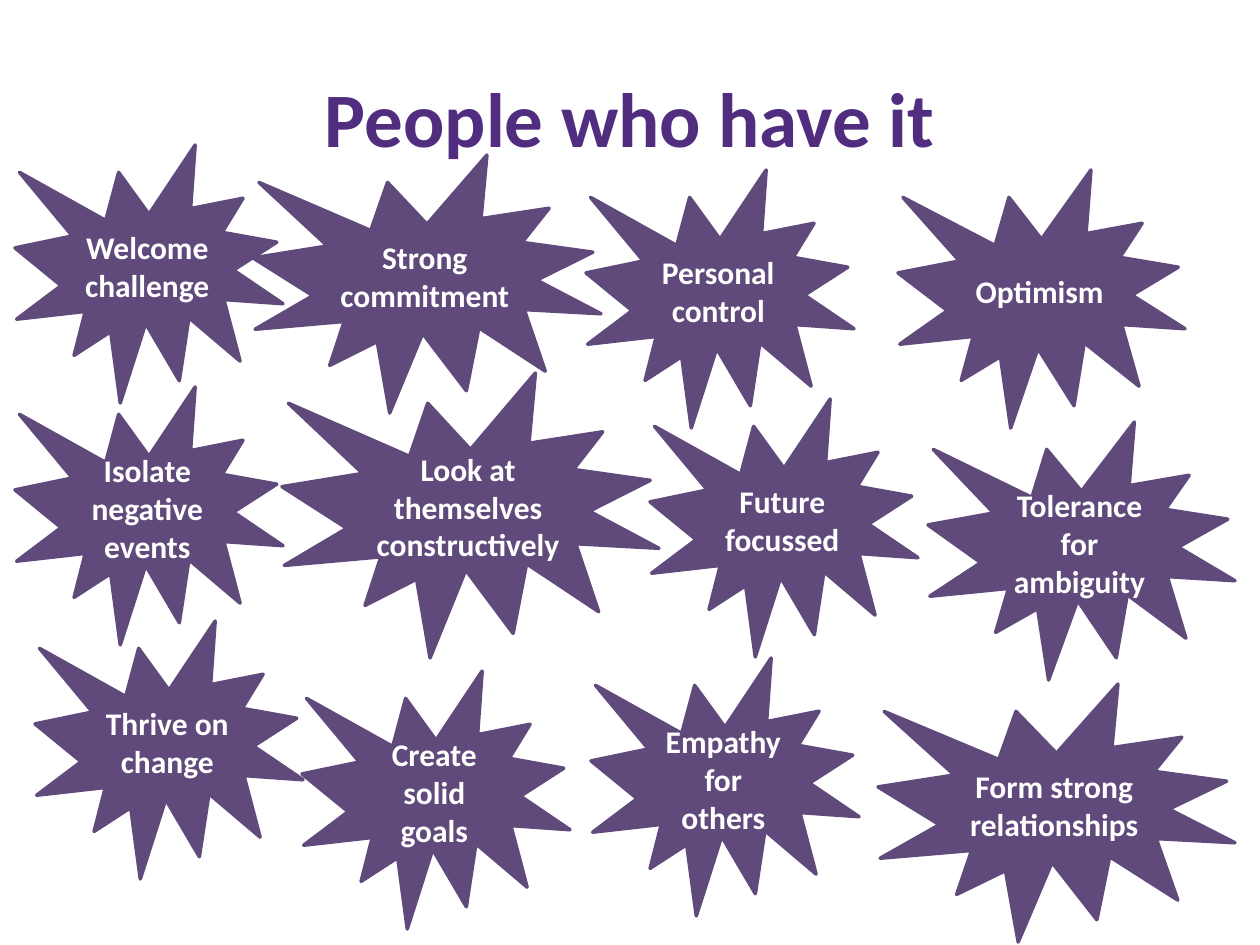
from pptx import Presentation
from pptx.dml.color import RGBColor
from pptx.enum.shapes import MSO_SHAPE
from pptx.enum.text import MSO_ANCHOR, PP_ALIGN
from pptx.util import Emu, Pt

PX = 914400 / 126  # EMU per pixel
TITLE_COLOUR = "502D7F"
STAR_COLOUR = "604A7B"
STAR_WIDTH, STAR_HEIGHT = 268, 258


def px(*lengths):
    return [Emu(round(length * PX)) for length in lengths]


def write(frame, text, size, colour):
    frame.word_wrap = True
    frame.vertical_anchor = MSO_ANCHOR.MIDDLE
    frame.text = text
    paragraph = frame.paragraphs[0]
    paragraph.alignment = PP_ALIGN.CENTER
    font = paragraph.runs[0].font
    font.name, font.size, font.bold = "Calibri", Pt(size), True
    font.color.rgb = RGBColor.from_string(colour)


prs = Presentation()
prs.slide_width, prs.slide_height = px(1260, 945)
slide = prs.slides.add_slide(prs.slide_layouts[5])

# Title
heading = slide.shapes.title
heading.left, heading.top, heading.width, heading.height = px(63, 38, 1134, 157)
write(heading.text_frame, "People who have it", size=44, colour=TITLE_COLOUR)

# Qualities, from back to front: text, left, top, width, height
qualities = [
    ("Welcome challenge", 15, 145, STAR_WIDTH, STAR_HEIGHT),
    ("Thrive on change", 35, 621, STAR_WIDTH, STAR_HEIGHT),
    ("Look at themselves constructively", 282, 373, 377, 285),
    ("Create solid goals", 302, 671, STAR_WIDTH, STAR_HEIGHT),
    ("Empathy for others", 591, 658, STAR_WIDTH, STAR_HEIGHT),
    ("Future focussed", 650, 399, STAR_WIDTH, STAR_HEIGHT),
    ("Form strong relationships", 878, 684, 357, STAR_HEIGHT),
    ("Tolerance for ambiguity", 928, 422, 307, STAR_HEIGHT),
    ("Optimism", 898, 170, 287, STAR_HEIGHT),
    ("Personal control", 586, 170, STAR_WIDTH, STAR_HEIGHT),
    ("Isolate negative events", 15, 387, STAR_WIDTH, STAR_HEIGHT),
    ("Strong commitment", 253, 155, 348, STAR_HEIGHT),
]
for quality, *bounds in qualities:
    star = slide.shapes.add_shape(MSO_SHAPE.EXPLOSION1, *px(*bounds))
    star.shadow.inherit = False
    star.fill.solid()
    star.fill.fore_color.rgb = RGBColor.from_string(STAR_COLOUR)
    star.line.color.rgb = RGBColor.from_string(STAR_COLOUR)
    star.line.width = Pt(2)
    write(star.text_frame, quality, size=18, colour="FFFFFF")

prs.save("out.pptx")
